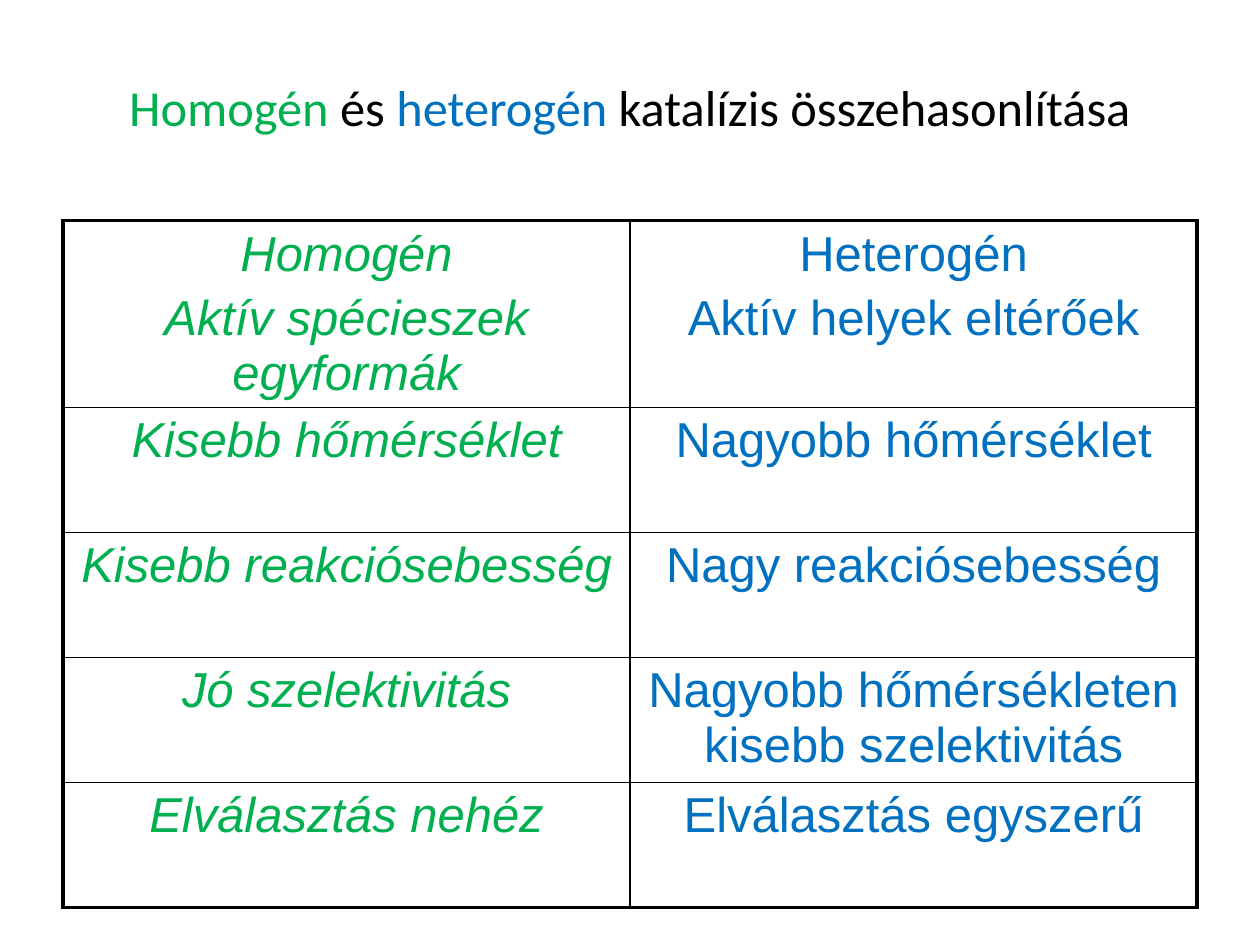
from dataclasses import dataclass

from lxml import etree
from pptx import Presentation
from pptx import util as u
from pptx.dml.color import RGBColor
from pptx.enum import text
from pptx.oxml import ns


@dataclass(frozen=True)
class Theme:
    green: str = "00B050"
    blue: str = "0070C0"
    black: str = "000000"
    title_font: str = "Calibri"
    body_font: str = "Arial"
    title_size: float = 28.8
    body_size: float = 28
    space_before: float = 5.6
    outer_line: float = 2.25
    inner_line: float = 1


THEME = Theme()

TITLE = [
    ("Homogén", THEME.green),
    (" és ", THEME.black),
    ("heterogén", THEME.blue),
    (" katalízis összehasonlítása", THEME.black),
]

COMPARISON = [
    ("Homogén\nAktív spécieszek egyformák", "Heterogén\nAktív helyek eltérőek"),
    ("Kisebb hőmérséklet", "Nagyobb hőmérséklet"),
    ("Kisebb reakciósebesség", "Nagy reakciósebesség"),
    ("Jó szelektivitás", "Nagyobb hőmérsékleten kisebb szelektivitás"),
    ("Elválasztás nehéz", "Elválasztás egyszerű"),
]


def format_run(r, font, size, color, italic=False):
    r.font.name = font
    r.font.size = u.Pt(size)
    r.font.italic = italic
    r.font.color.rgb = RGBColor.from_string(color)


def add_title(s):
    sp = s.shapes.title
    sp.left, sp.top, sp.width, sp.height = u.Cm(1.27), u.Cm(0.76), u.Cm(22.86), u.Cm(2.77)
    tf = sp.text_frame
    tf.vertical_anchor = text.MSO_ANCHOR.MIDDLE
    p = tf.paragraphs[0]
    p.alignment = text.PP_ALIGN.CENTER
    for words, color in TITLE:
        r = p.add_run()
        r.text = words
        format_run(r, THEME.title_font, THEME.title_size, color)


def set_borders(cell, outer):
    tc_pr = cell._tc.get_or_add_tcPr()
    for side in ("L", "R", "T", "B"):
        width = THEME.outer_line if side in outer else THEME.inner_line
        ln = etree.SubElement(tc_pr, ns.qn(f"a:ln{side}"), w=str(u.Pt(width)))
        fill = etree.SubElement(ln, ns.qn("a:solidFill"))
        etree.SubElement(fill, ns.qn("a:srgbClr"), val=THEME.black)


def fill_cell(cell, words, color, italic):
    cell.fill.background()
    tf = cell.text_frame
    tf.text = words
    for p in tf.paragraphs:
        p.alignment = text.PP_ALIGN.CENTER
        p.space_before = u.Pt(THEME.space_before)
        for r in p.runs:
            format_run(r, THEME.body_font, THEME.body_size, color, italic)


def add_comparison(s):
    heights = [u.Cm(3.76)] + [u.Cm(2.52)] * (len(COMPARISON) - 1)
    frame = s.shapes.add_table(
        len(COMPARISON), 2, u.Cm(1.27), u.Cm(4.45), u.Cm(22.86), sum(heights))
    table = frame.table
    table.first_row = False
    table.horz_banding = False
    for i, (pair, height) in enumerate(zip(COMPARISON, heights)):
        table.rows[i].height = height
        edge = {0: "T", len(COMPARISON) - 1: "B"}.get(i, "")
        columns = ((THEME.green, True, "L"), (THEME.blue, False, "R"))
        for j, (words, (color, italic, side)) in enumerate(zip(pair, columns)):
            cell = table.cell(i, j)
            set_borders(cell, edge + side)
            fill_cell(cell, words, color, italic)


def main():
    prs = Presentation()
    prs.slide_width, prs.slide_height = u.Cm(25.4), u.Cm(19.05)
    s = prs.slides.add_slide(prs.slide_layouts[5])
    add_title(s)
    add_comparison(s)
    prs.save("out.pptx")


if __name__ == "__main__":
    main()
